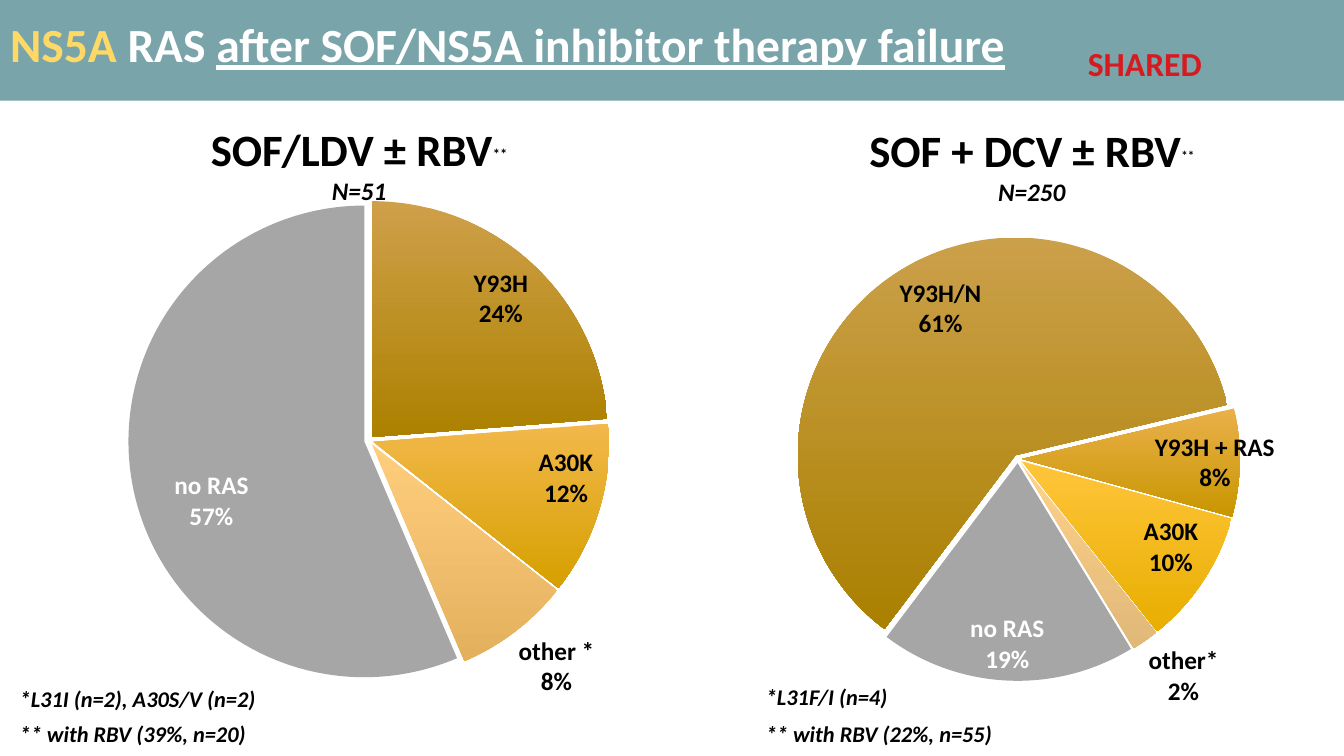
"""Build the slide on NS5A resistance after failure of combination therapy."""
from dataclasses import dataclass

from lxml import etree
from pptx import Presentation
from pptx.chart.data import CategoryChartData
from pptx.dml.color import RGBColor
from pptx.enum.chart import XL_CHART_TYPE, XL_LABEL_POSITION
from pptx.enum.shapes import MSO_SHAPE
from pptx.enum.text import MSO_ANCHOR, PP_ALIGN
from pptx.oxml import parse_xml
from pptx.oxml.ns import nsdecls, qn
from pptx.util import Pt

PIE = XL_CHART_TYPE.PIE
RECTANGLE = MSO_SHAPE.RECTANGLE
TOP = MSO_ANCHOR.TOP
LEFT, CENTER = PP_ALIGN.LEFT, PP_ALIGN.CENTER
INSIDE, OUTSIDE = XL_LABEL_POSITION.INSIDE_END, XL_LABEL_POSITION.OUTSIDE_END
TITLE_ONLY = 5


@dataclass(frozen=True)
class Theme:
    font: str = "Calibri"
    band: str = "79A4AA"
    white: str = "FFFFFF"
    black: str = "000000"
    accent: str = "FFD966"
    red: str = "D71A20"
    gray: str = "A6A6A6"
    title: int = 34
    heading: int = 32
    tag: int = 24
    label: int = 18
    note: int = 16


@dataclass(frozen=True)
class Slice:
    name: str
    value: int
    top_color: str
    bottom_color: str
    position: object = INSIDE
    text_color: str = Theme.black
    offset: tuple = (0, 0)


class SlideBuilder:
    def __init__(self, presentation, theme):
        self.theme = theme
        self.slide = presentation.slides.add_slide(presentation.slide_layouts[TITLE_ONLY])

    def style(self, font, size, color, italic=False):
        font.name, font.size, font.bold, font.italic = self.theme.font, Pt(size), True, italic
        font.color.rgb = RGBColor.from_string(color)

    def band(self, width, height):
        shape = self.slide.shapes.add_shape(RECTANGLE, 0, 0, Pt(width), Pt(height))
        shape.shadow.inherit = False
        shape.fill.solid()
        shape.fill.fore_color.rgb = RGBColor.from_string(self.theme.band)
        shape.line.fill.background()
        tree = shape._element.getparent()
        tree.remove(shape._element)
        tree.insert(2, shape._element)

    def title(self, box, gene, subject, underlined):
        shape = self.slide.shapes.title
        shape.left, shape.top, shape.width, shape.height = map(Pt, box)
        shape.text_frame.vertical_anchor = TOP
        shape.text_frame.word_wrap = True
        paragraph = shape.text_frame.paragraphs[0]
        paragraph.alignment = LEFT
        paragraph.line_spacing = 0.9
        self.style(paragraph.font, self.theme.title, self.theme.white)
        first, _, last = [self.run(paragraph, text) for text in (gene, subject, underlined)]
        first.font.color.rgb = RGBColor.from_string(self.theme.accent)
        last.font.underline = True

    def run(self, paragraph, text):
        run = paragraph.add_run()
        run.text = text
        return run

    def text(self, box, text, size, color, wrap=True, italic=False):
        shape = self.slide.shapes.add_textbox(*map(Pt, box))
        shape.text_frame.word_wrap = wrap
        paragraph = shape.text_frame.paragraphs[0]
        self.run(paragraph, text)
        self.style(paragraph.font, size, color, italic)
        return shape.text_frame

    def heading(self, box, therapy, mark_size, count):
        theme = self.theme
        frame = self.text(box, therapy, theme.heading, theme.black)
        mark = self.run(frame.paragraphs[0], "**")
        mark.font.size = Pt(mark_size)
        mark._r.get_or_add_rPr().set("baseline", "30000")
        paragraph = frame.add_paragraph()
        self.run(paragraph, count)
        self.style(paragraph.font, theme.label, theme.black, italic=True)
        for paragraph in frame.paragraphs:
            paragraph.alignment = CENTER

    def notes(self, left, tops, texts):
        for top, text in zip(tops, texts):
            self.text((left, top, 186, 27), text, self.theme.note, self.theme.black,
                      wrap=False, italic=True)

    def pie(self, box, plot_box, slices, start=0):
        data = CategoryChartData(number_format='0"%"')
        data.categories = [part.name for part in slices]
        data.add_series("Series 1", [part.value for part in slices])
        chart = self.slide.shapes.add_chart(PIE, *map(Pt, box), data).chart
        chart.has_legend = chart.has_title = False
        self.style(chart.font, self.theme.label, self.theme.black)
        plot = chart.plots[0]
        plot.vary_by_categories = True
        angle = plot._element.find(qn("c:firstSliceAng"))
        if angle is None:
            angle = etree.SubElement(plot._element, qn("c:firstSliceAng"))
        angle.set("val", str(start))
        area = chart._chartSpace.chart.plotArea
        for old in area.findall(qn("c:layout")):
            area.remove(old)
        area.insert(0, self.layout(plot_box))
        series = plot.series[0]
        for index, part in enumerate(slices):
            self.slice(series, index, part)
        explosion = etree.Element(qn("c:explosion"), val="2")
        series._element.find(qn("c:dPt")).addprevious(explosion)

    def layout(self, values):
        target = '<c:layoutTarget val="inner"/>' if len(values) == 4 else ""
        modes = '<c:xMode val="edge"/><c:yMode val="edge"/>' if target else ""
        sizes = "".join(f'<c:{key} val="{value}"/>' for key, value in zip("xywh", values))
        return parse_xml(f'<c:layout {nsdecls("c")}><c:manualLayout>{target}{modes}{sizes}'
                         "</c:manualLayout></c:layout>")

    def slice(self, series, index, part):
        point = series.points[index]
        fill = point.format.fill
        if part.top_color == part.bottom_color:
            fill.solid()
            fill.fore_color.rgb = RGBColor.from_string(part.top_color)
        else:
            fill.gradient()
            fill.gradient_angle = 270
            for stop, color in zip(fill.gradient_stops, (part.top_color, part.bottom_color)):
                stop.color.rgb = RGBColor.from_string(color)
        point.format.line.fill.background()
        label = point.data_label
        self.style(label.font, self.theme.label, part.text_color)
        label.position = part.position
        element = series._element.findall(f'{qn("c:dLbls")}/{qn("c:dLbl")}')[index]
        element.find(qn("c:showCatName")).set("val", "1")
        element.find(qn("c:showVal")).set("val", "1")
        element.find(qn("c:showPercent")).set("val", "0")
        etree.SubElement(element, qn("c:separator")).text = "\n"
        number = etree.Element(qn("c:numFmt"), formatCode='0"%"', sourceLinked="0")
        element.find(qn("c:idx")).addnext(number)
        if any(part.offset):
            number.addprevious(self.layout(part.offset))


def main():
    presentation = Presentation()
    presentation.slide_width, presentation.slide_height = Pt(960), Pt(540)
    theme = Theme()
    builder = SlideBuilder(presentation, theme)
    builder.band(960, 72)
    builder.title((0, 12, 828, 104), "NS5A ", "RAS ", "after SOF/NS5A inhibitor therapy failure")
    builder.text((770, 27, 130, 39), "SHARED", theme.tag, theme.red)
    builder.heading((89, 83.5, 335, 107), "SOF/LDV ± RBV", 18, "N=51")
    builder.heading((578, 84, 318, 109), "SOF + DCV ± RBV", 16, "N=250")
    builder.pie((4, 131, 504, 395), (0.17, 0.03, 0.69, 0.87), [
        Slice("Y93H", 24, "CFA04A", "AC8100"),
        Slice("A30K", 12, "F2B84A", "D6A000"),
        Slice("other *", 8, "FFCE7D", "E3B05D", OUTSIDE),
        Slice("no RAS", 57, theme.gray, theme.gray, INSIDE, theme.white, (0.05, 0.08)),
    ])
    builder.notes(7, (486, 510.5), ("*L31I (n=2), A30S/V (n=2)", "** with RBV (39%, n=20)"))
    builder.pie((466, 159, 488, 371), (0.21, 0, 0.65, 0.91), [
        Slice("Y93H/N", 61, "CBA04A", "AA8000"),
        Slice("Y93H + RAS", 8, "EAB04A", "C89600", offset=(0.06, 0)),
        Slice("A30K", 10, "FFC53A", "E8AE00"),
        Slice("other*", 2, "FFD28A", "E0B878", OUTSIDE),
        Slice("no RAS", 19, theme.gray, theme.gray, INSIDE, theme.white),
    ], start=217)
    builder.notes(540, (484.5, 511), ("*L31F/I (n=4)", "** with RBV (22%, n=55)"))
    presentation.save("out.pptx")


if __name__ == "__main__":
    main()
